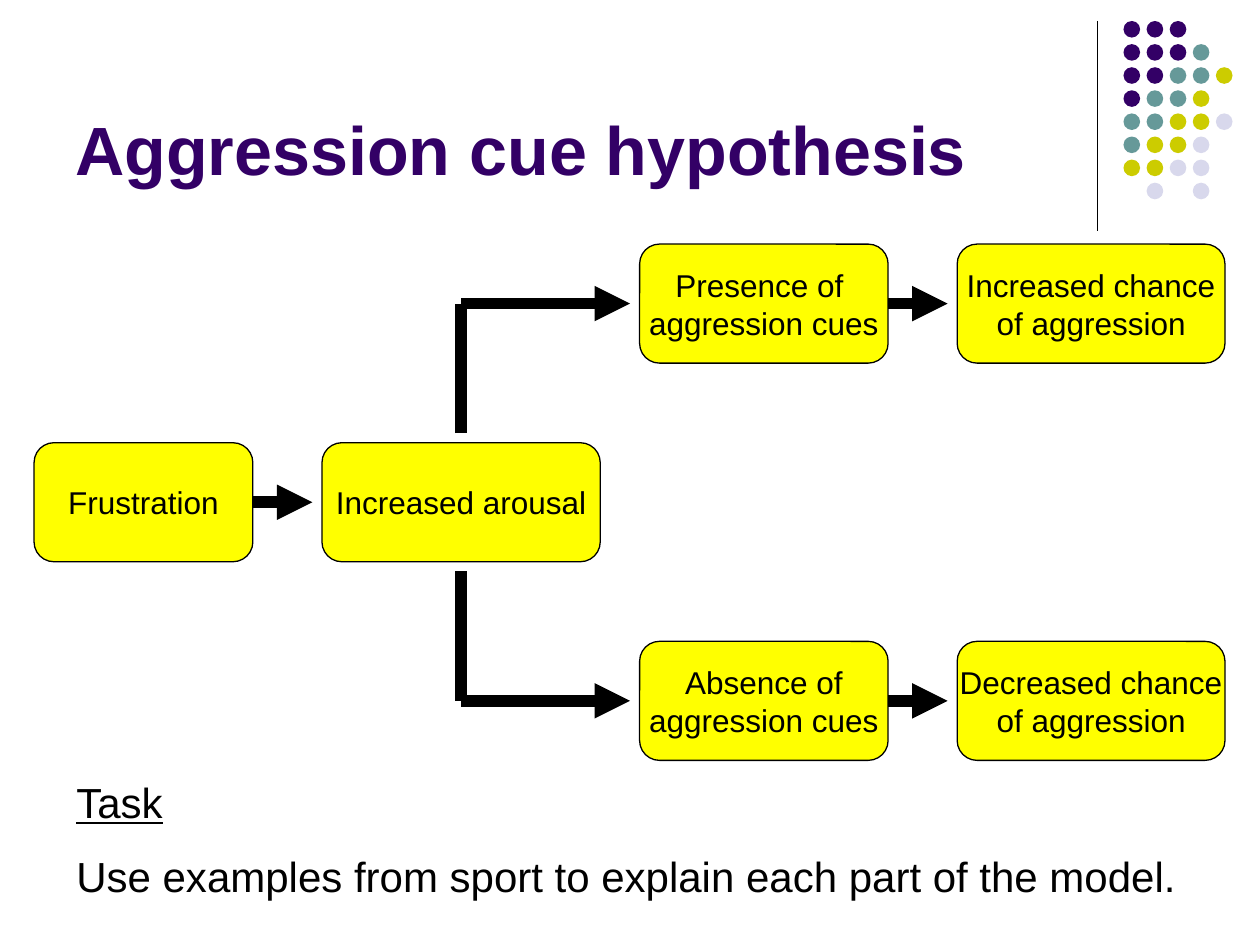
from lxml.etree import SubElement
from pptx import Presentation
from pptx.dml.color import RGBColor
from pptx.enum.shapes import MSO_CONNECTOR, MSO_SHAPE
from pptx.enum.text import MSO_ANCHOR, PP_ALIGN
from pptx.oxml.ns import qn
from pptx.util import Pt

hues = {"ink": "000000", "box": "FFFF00", "P": "330066", "T": "669999",
        "Y": "CCCC00", "L": "D8D8EC"}
hues = {name: RGBColor.from_string(code) for name, code in hues.items()}

deck = Presentation()
deck.slide_width, deck.slide_height = Pt(720), Pt(540)
slide = deck.slides.add_slide(deck.slide_layouts[6])
shapes = slide.shapes


def write(frame, lines, hue, style, layout):
    for key, value in layout.items():
        setattr(frame, key, value)
    for at, line in enumerate(lines):
        para = frame.paragraphs[0] if at == 0 else frame.add_paragraph()
        run = para.add_run()
        run.text = line
        run.font.name = "Arial"
        run.font.color.rgb = hues[hue]
        for key, value in style.items():
            setattr(run.font, key, value)


def draw(start, end, width, arrow=False):
    line = shapes.add_connector(MSO_CONNECTOR.STRAIGHT, *map(Pt, start + end))
    line.line.color.rgb = hues["ink"]
    line.line.width = Pt(width)
    if arrow:
        SubElement(line.line._get_or_add_ln(), qn("a:tailEnd"), type="triangle")
    SubElement(line._element.spPr, qn("a:effectLst"))


draw((627, 12), (627, 132), 0.75)

dots = ["PPP", "PPPT", "PPTTY", "PTTY", "TTYYL", "TYYL", "YYLL", " L L"]
step = 13.2
for row, marks in enumerate(dots):
    for col, mark in enumerate(marks):
        if mark == " ":
            continue
        dot = shapes.add_shape(MSO_SHAPE.OVAL, Pt(642 + col * step),
                               Pt(12 + row * step), Pt(9.5), Pt(9.5))
        dot.shadow.inherit = False
        dot.fill.solid()
        dot.fill.fore_color.rgb = hues[mark]
        dot.line.fill.background()

title = shapes.add_textbox(Pt(36), Pt(9.5), Pt(594), Pt(102))
write(title.text_frame, ["Aggression cue hypothesis"], "P",
      {"size": Pt(39), "bold": True},
      {"word_wrap": True, "vertical_anchor": MSO_ANCHOR.BOTTOM})

high, mid, low = 173.5, 287, 400.5
tall = 68
boxes = [
    (19.5, mid, 125, ["Frustration"]),
    (184, mid, 159, ["Increased arousal"]),
    (365.5, high, 142, ["Presence of ", "aggression cues"]),
    (547, high, 153, ["Increased chance", "of aggression"]),
    (365.5, low, 142, ["Absence of", "aggression cues"]),
    (547, low, 153, ["Decreased chance", "of aggression"]),
]
for left, axis, wide, lines in boxes:
    box = shapes.add_shape(MSO_SHAPE.ROUNDED_RECTANGLE, Pt(left),
                           Pt(axis - tall / 2), Pt(wide), Pt(tall))
    box.shadow.inherit = False
    box.fill.solid()
    box.fill.fore_color.rgb = hues["box"]
    box.line.color.rgb = hues["ink"]
    box.line.width = Pt(0.75)
    write(box.text_frame, lines, "ink", {"size": Pt(18)},
          {"word_wrap": False, "vertical_anchor": MSO_ANCHOR.MIDDLE})
    for para in box.text_frame.paragraphs:
        para.alignment = PP_ALIGN.CENTER

stem, gap = 263.5, 39.5
draw((144.5, mid), (178.5, mid), 6.75, True)
for axis, side in ((high, -1), (low, 1)):
    draw((stem, mid + side * gap), (stem, axis), 6.75)
    draw((stem, axis), (360, axis), 6.75, True)
    draw((507.5, axis), (541.5, axis), 6.75, True)

task = shapes.add_textbox(Pt(36.5), Pt(440), Pt(658), Pt(79))
write(task.text_frame,
      ["Task", "Use examples from sport to explain each part of the model."],
      "ink", {"size": Pt(24)}, {"word_wrap": True})
first, last = task.text_frame.paragraphs
first.runs[0].font.underline = True
last.space_before = Pt(13.5)

deck.save("out.pptx")
